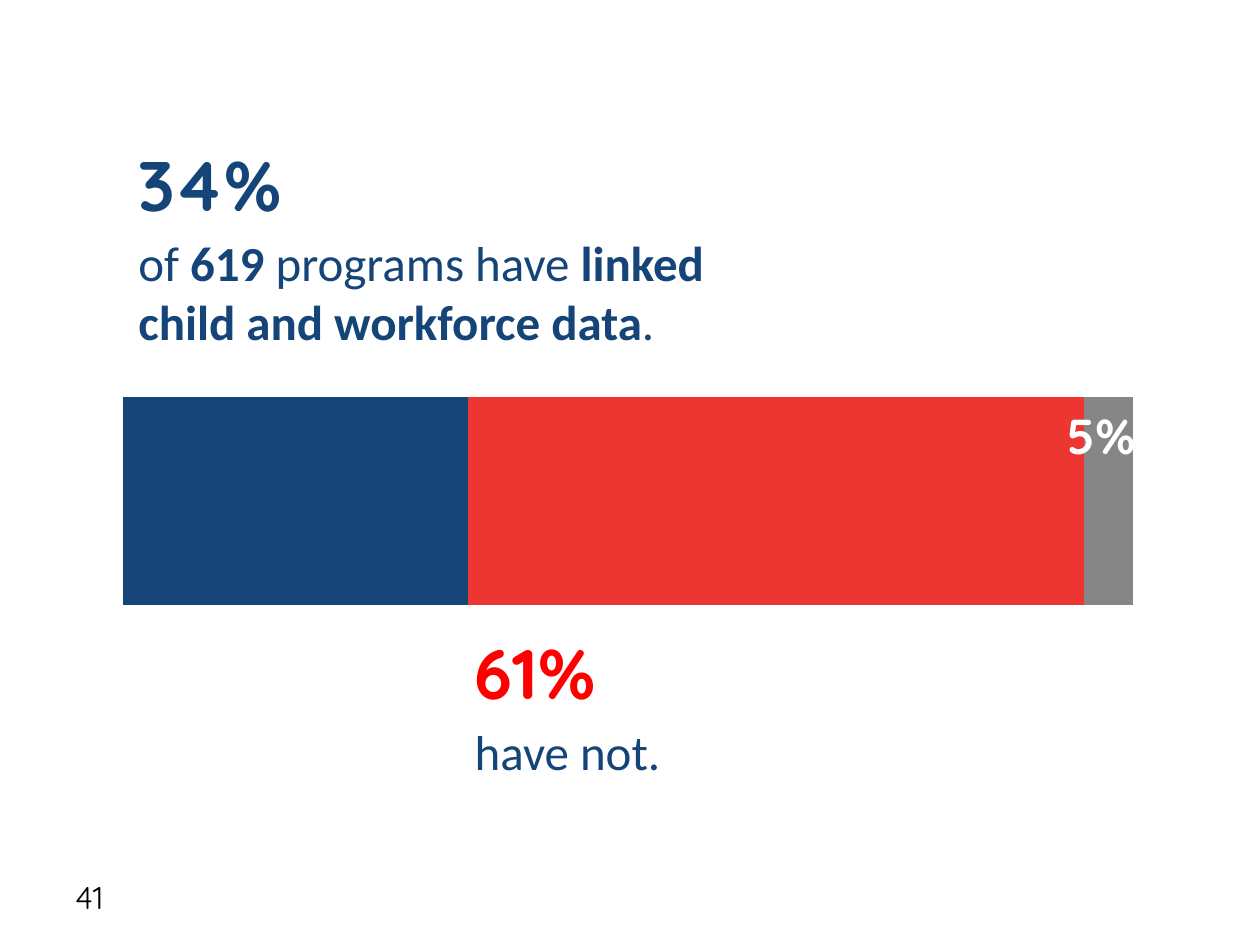
from dataclasses import dataclass

from lxml import etree
from pptx import Presentation
from pptx.chart.data import CategoryChartData
from pptx.dml.color import RGBColor
from pptx.enum.chart import XL_CHART_TYPE
from pptx.enum.text import MSO_ANCHOR
from pptx.util import Cm, Pt

STACKED = XL_CHART_TYPE.BAR_STACKED
TOP = MSO_ANCHOR.TOP
MIDDLE = MSO_ANCHOR.MIDDLE


@dataclass(frozen=True)
class Theme:
    navy: str = "154578"
    coral: str = "ED3532"
    gray: str = "868687"
    red: str = "FF0000"
    white: str = "FFFFFF"
    black: str = "000000"
    head: str = "Quicksand"
    body: str = "Calibri"
    big: int = 40
    mid: int = 28
    small: int = 18


THEME = Theme()


def style(font, size, face, color, bold=False):
    font.size = Pt(size)
    font.name = face
    font.bold = bold
    font.color.rgb = RGBColor.from_string(color)


def add_text(slide, box, parts, size, face, color, anchor=TOP, lead=0.2):
    frame = slide.shapes.add_textbox(*map(Cm, box)).text_frame
    frame.word_wrap = True
    frame.vertical_anchor = anchor
    para = frame.paragraphs[0]
    para.space_before = Pt(round(size * lead, 1))
    for text, bold in parts:
        run = para.add_run()
        run.text = text
        style(run.font, size, face, color, bold)


def add_claim(slide, box, value, color, parts):
    left, top, width, height = box
    head = 1.85
    add_text(slide, (left, top, width, head), [(value, True)],
             THEME.big, THEME.head, color)
    add_text(slide, (left, top + head, width, height - head), parts,
             THEME.mid, THEME.body, THEME.navy)


def set_plot(chart, x, y, width, height):
    plot = chart.plots[0]
    area = chart.element.chart.plotArea
    space = area.nsmap["c"]
    for old in area.findall(f"{{{space}}}layout"):
        area.remove(old)
    layout = etree.Element(f"{{{space}}}layout")
    manual = etree.SubElement(layout, f"{{{space}}}manualLayout")
    rules = {"layoutTarget": "inner", "xMode": "edge", "yMode": "edge",
             "x": x, "y": y, "w": width, "h": height}
    for tag, value in rules.items():
        etree.SubElement(manual, f"{{{space}}}{tag}").set("val", str(value))
    area.insert(0, layout)
    plot.gap_width = 150
    plot.overlap = 100
    plot.vary_by_categories = False


def add_bar(slide, box):
    data = CategoryChartData()
    data.categories = ["1"]
    for index, value in enumerate((56, 100, 8), 1):
        data.add_series(f"Series {index}", [value])
    chart = slide.shapes.add_chart(STACKED, *map(Cm, box), data).chart
    chart.has_legend = False
    chart.has_title = False
    style(chart.font, THEME.small, THEME.body, THEME.black)
    set_plot(chart, 0.017, 0.047, 0.963, 0.931)
    axis = chart.value_axis
    axis.minimum_scale = 0
    axis.maximum_scale = 164
    axis.major_unit = 33
    axis.has_major_gridlines = False
    axis.tick_labels.number_format = "0%"
    axis.tick_labels.number_format_is_linked = False
    axis.visible = False
    chart.category_axis.visible = False
    colors = (THEME.navy, THEME.coral, THEME.gray)
    for series, color in zip(chart.plots[0].series, colors):
        fill = series.format.fill
        fill.solid()
        fill.fore_color.rgb = RGBColor.from_string(color)

    left, top, width, height = box
    add_text(slide, (left + 19.15, top + 3.73, 3.38, 1.45), [("5%", True)],
             THEME.mid, THEME.head, THEME.white)


def main():
    deck = Presentation()
    deck.slide_width = Cm(25.4)
    deck.slide_height = Cm(19.05)
    slide = deck.slides.add_slide(deck.slide_layouts[6])
    add_text(slide, (1.27, 17.58, 5.92, 1.02), [("41", False)],
             THEME.small, THEME.head, THEME.black, MIDDLE, 0)
    add_bar(slide, (2.11, 4.32, 21.16, 11.28))
    add_claim(slide, (2.54, 2.72, 12.27, 4.5), "34%", THEME.navy, [
        ("of ", False), ("619", True), (" programs have ", False),
        ("linked child and workforce data", True), (".", False)])
    add_claim(slide, (9.32, 12.57, 12.27, 3.3), "61%", THEME.red,
              [("have not.", False)])
    deck.save("out.pptx")


if __name__ == "__main__":
    main()
